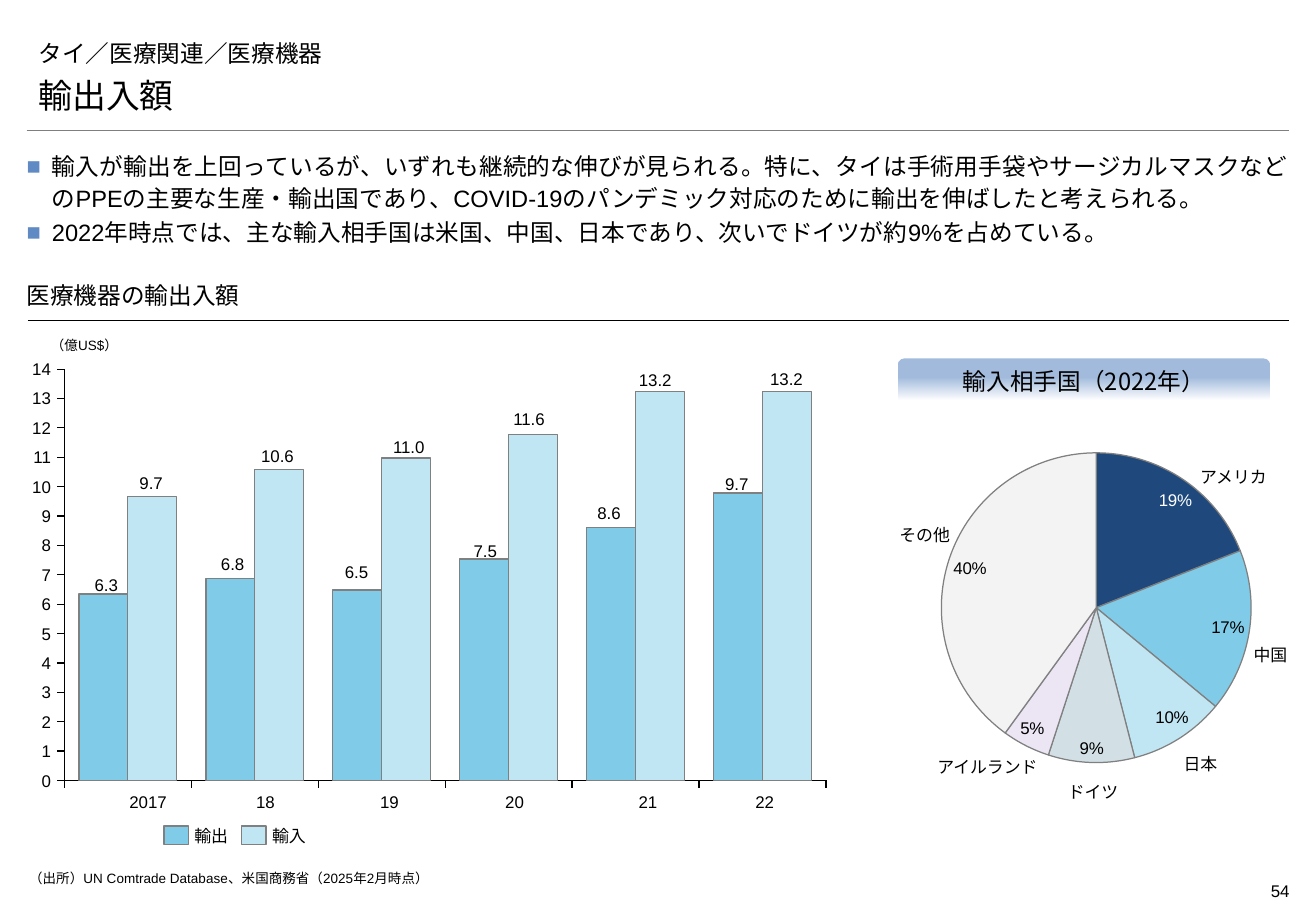
"""Builds the slide on Thailand's imports and exports of medical devices."""
from lxml.etree import SubElement
from pptx import Presentation
from pptx.chart.data import CategoryChartData
from pptx.dml.color import RGBColor
from pptx.enum.chart import XL_CHART_TYPE, XL_LABEL_POSITION, XL_TICK_LABEL_POSITION, XL_TICK_MARK
from pptx.enum.shapes import MSO_CONNECTOR, MSO_SHAPE
from pptx.enum.text import MSO_ANCHOR, PP_ALIGN
from pptx.oxml import parse_xml
from pptx.oxml.ns import nsdecls, qn
from pptx.util import Pt

COLORS = {
    "text": "000000", "white": "FFFFFF", "rule": "7F7F7F", "edge": "808080",
    "bullet": "5F8AC3", "header": "A2BBDC", "export": "80CCE8", "import": "C0E6F4",
    "usa": "1F497D", "germany": "D2E0E6", "ireland": "ECE5F4", "others": "F3F3F3",
}
RGB = {name: RGBColor.from_string(code) for name, code in COLORS.items()}
LEFT, CENTER, RIGHT = PP_ALIGN.LEFT, PP_ALIGN.CENTER, PP_ALIGN.RIGHT
TOP, MIDDLE, BOTTOM = MSO_ANCHOR.TOP, MSO_ANCHOR.MIDDLE, MSO_ANCHOR.BOTTOM


def add_run(p, text, size, font="Arial"):
    r = p.add_run()
    r.text = text
    r.font.size = Pt(size)
    r.font.name = font
    r.font.color.rgb = RGB["text"]
    r._r.rPr.set("lang", "ja-JP")
    SubElement(r._r.rPr, qn("a:ea")).set("typeface", "Noto Sans CJK JP")


def add_text(x, y, w, h, text, size=10, align=LEFT, anchor=MIDDLE, font="Arial",
             margins=(0, 0, 0, 0), wrap=False):
    tf = s.shapes.add_textbox(Pt(x), Pt(y), Pt(w), Pt(h)).text_frame
    tf.word_wrap = wrap
    tf.vertical_anchor = anchor
    tf.margin_left, tf.margin_top, tf.margin_right, tf.margin_bottom = map(Pt, margins)
    tf.paragraphs[0].alignment = align
    add_run(tf.paragraphs[0], text, size, font)


prs = Presentation()
prs.slide_width, prs.slide_height = Pt(780), Pt(540)
s = prs.slides.add_slide(prs.slide_layouts[6])

for x, y, width, color in [(15.8, 77.2, 0.25, "rule"), (16.5, 190.2, 0.75, "text")]:
    line = s.shapes.add_connector(MSO_CONNECTOR.STRAIGHT, Pt(x), Pt(y), Pt(764), Pt(y))
    line.line.width = Pt(width)
    line.line.color.rgb = RGB[color]
    SubElement(line._element.spPr, qn("a:effectLst"))

add_text(15.8, 18.7, 748, 24.5, "タイ／医療関連／医療機器", 14, anchor=BOTTOM,
         font="Montserrat", margins=(7.2, 3.6, 7.2, 3.6), wrap=True)
add_text(15.8, 40.3, 748, 31.7, "輸出入額", 20, anchor=BOTTOM,
         font="Montserrat", margins=(7.2, 3.6, 7.2, 3.6), wrap=True)
add_text(15.8, 167, 748, 22.3, "医療機器の輸出入額", 14, anchor=BOTTOM,
         font="Montserrat", margins=(0, 3.6, 0, 5.8), wrap=True)
add_text(30.2, 195.8, 54, 17.3, "（億US$）", 8, wrap=True)
add_text(17.3, 515.5, 538.5, 17.3, "（出所）UN Comtrade Database、米国商務省（2025年2月時点）", 8,
         anchor=TOP, wrap=True)
add_text(707.7, 518.4, 56.6, 19.4, "54", align=RIGHT, anchor=TOP, margins=(0, 3.6, 0, 3.6), wrap=True)

POINTS = [
    "輸入が輸出を上回っているが、いずれも継続的な伸びが見られる。特に、タイは手術用手袋やサージカルマスクなどの"
    "PPEの主要な生産・輸出国であり、COVID-19のパンデミック対応のために輸出を伸ばしたと考えられる。",
    "2022年時点では、主な輸入相手国は米国、中国、日本であり、次いでドイツが約9%を占めている。",
]
tf = s.shapes.add_textbox(Pt(15.8), Pt(88.6), Pt(748), Pt(56.2)).text_frame
tf.word_wrap = True
tf.margin_left = tf.margin_top = tf.margin_right = tf.margin_bottom = 0
for i, text in enumerate(POINTS):
    p = tf.add_paragraph() if i else tf.paragraphs[0]
    p.alignment = PP_ALIGN.JUSTIFY
    p.line_spacing = 1.1
    p.space_after = Pt(2)
    pPr = p._p.get_or_add_pPr()
    pPr.set("marL", str(Pt(15)))
    pPr.set("indent", str(-Pt(15)))
    SubElement(SubElement(pPr, qn("a:buClr")), qn("a:srgbClr")).set("val", COLORS["bullet"])
    SubElement(pPr, qn("a:buFont")).set("typeface", "Arial")
    SubElement(pPr, qn("a:buChar")).set("char", "■")
    add_run(p, text, 14)

header = s.shapes.add_shape(MSO_SHAPE.ROUND_2_SAME_RECTANGLE, Pt(532), Pt(212.4), Pt(221), Pt(25.2))
header.shadow.inherit = False
header.line.fill.background()
header.fill.gradient()
header.fill.gradient_angle = 270
for stop, position, color in zip(header.fill.gradient_stops, (0.45, 1), ("header", "white")):
    stop.position = position
    stop.color.rgb = RGB[color]
tf = header.text_frame
tf.vertical_anchor = MIDDLE
tf.paragraphs[0].alignment = CENTER
add_run(tf.paragraphs[0], "輸入相手国（2022年）", 14, "Noto Sans CJK JP")

trade = CategoryChartData()
trade.categories = ["2017", "18", "19", "20", "21", "22"]
trade.add_series("輸出", [48, 52, 49, 57, 65, 74])
trade.add_series("輸入", [73, 80, 83, 89, 100, 100])
bars = s.shapes.add_chart(XL_CHART_TYPE.COLUMN_CLUSTERED, Pt(31.7), Pt(212.4), Pt(464.4), Pt(257), trade).chart
plot = bars.plots[0]
plot.gap_width = 60
plot.overlap = 0
plot.vary_by_categories = False
for series, color in zip(plot.series, ("export", "import")):
    series.format.fill.solid()
    series.format.fill.fore_color.rgb = RGB[color]
    series.format.line.color.rgb = RGB["edge"]
    series.format.line.width = Pt(0.75)
TICK = 7.56
for axis in (bars.category_axis, bars.value_axis):
    axis.tick_label_position = XL_TICK_LABEL_POSITION.NONE
    axis.major_tick_mark = XL_TICK_MARK.OUTSIDE
    axis.minor_tick_mark = XL_TICK_MARK.NONE
    axis.has_major_gridlines = False
    axis.format.line.color.rgb = RGB["text"]
    axis.format.line.width = Pt(0.75)
bars.value_axis.minimum_scale = 0
bars.value_axis.maximum_scale = 14 * TICK
bars.value_axis.major_unit = TICK

partners = CategoryChartData(number_format='#,##0"%";"-"#,##0"%"')
partners.categories = ["アメリカ", "中国", "日本", "ドイツ", "アイルランド", "その他"]
partners.add_series("輸入相手国", [19, 17, 10, 9, 5, 40])
pie = s.shapes.add_chart(XL_CHART_TYPE.PIE, Pt(551.5), Pt(262), Pt(196.6), Pt(196.6), partners).chart
shares = pie.plots[0].series[0]
for i, color in enumerate(("usa", "export", "import", "germany", "ireland", "others")):
    slice_format = shares.points[i].format
    slice_format.fill.solid()
    slice_format.fill.fore_color.rgb = RGB[color]
    slice_format.line.color.rgb = RGB["edge"]
    slice_format.line.width = Pt(0.75)
labels = shares.data_labels
labels.show_value = True
labels.number_format = partners.number_format
labels.number_format_is_linked = False
labels.position = XL_LABEL_POSITION.BEST_FIT
usa_label = shares.points[0].data_label
usa_label.font.size = Pt(10)
usa_label.font.name = "Arial"
usa_label.font.color.rgb = RGB["white"]
usa_label.position = XL_LABEL_POSITION.BEST_FIT

for chart, (x, y, w, h) in [(bars, (0.014, 0.025, 0.972, 0.949)), (pie, (0.033, 0.033, 0.934, 0.934))]:
    chart.has_title = False
    chart.has_legend = False
    chart.font.size = Pt(10)
    chart.font.name = "Arial"
    chart.font.color.rgb = RGB["text"]
    area = chart._chartSpace.chart.plotArea
    for layout in area.findall(qn("c:layout")):
        area.remove(layout)
    area.insert(0, parse_xml(
        f'<c:layout {nsdecls("c")}><c:manualLayout><c:layoutTarget val="inner"/>'
        f'<c:xMode val="edge"/><c:yMode val="edge"/><c:x val="{x}"/><c:y val="{y}"/>'
        f'<c:w val="{w}"/><c:h val="{h}"/></c:manualLayout></c:layout>'))

for value in range(15):
    add_text(18, 456.5 - 17.43 * value, 12.2, 12.2, str(value), align=RIGHT)

BAR_LABELS = [
    ("6.3", 63, 340.6), ("9.7", 89.6, 280), ("6.8", 137.9, 328.3), ("10.6", 164.5, 264.2),
    ("6.5", 211.3, 332.6), ("11.0", 242.3, 258.5), ("7.5", 287.6, 320.4), ("11.6", 313.6, 242),
    ("8.6", 361, 298), ("13.2", 388.4, 218.9), ("9.7", 436.7, 280.8), ("13.2", 466.2, 218.2),
]
for text, center, y in BAR_LABELS:
    add_text(center - 11.2, y, 22.4, 12.2, text, align=CENTER, anchor=BOTTOM)

for year, center in zip(("2017", "18", "19", "20", "21", "22"), (87.8, 157.3, 230.8, 305, 384, 453.3)):
    add_text(center - 15, 469.4, 30, 22.3, year, align=CENTER, anchor=TOP)

for name, color, x in [("輸出", "export", 97.2), ("輸入", "import", 143.3)]:
    key = s.shapes.add_shape(MSO_SHAPE.RECTANGLE, Pt(x), Pt(489.6), Pt(14.4), Pt(10.8))
    key.shadow.inherit = False
    key.fill.solid()
    key.fill.fore_color.rgb = RGB[color]
    key.line.color.rgb = RGB["edge"]
    key.line.width = Pt(0.75)
    add_text(x + 18, 489.6, 24, 12.2, name)

for country, edge, y, align in [
    ("アメリカ", 711.4, 276.5, LEFT), ("中国", 743, 382.3, LEFT), ("ドイツ", 632.9, 463, LEFT),
    ("日本", 721.5, 446.4, RIGHT), ("アイルランド", 614.9, 448.6, RIGHT), ("その他", 563, 311, RIGHT),
]:
    w = 10 * len(country) + 4
    add_text(edge - w if align == RIGHT else edge, y, w, 12.2, country, align=align)

prs.save("out.pptx")
